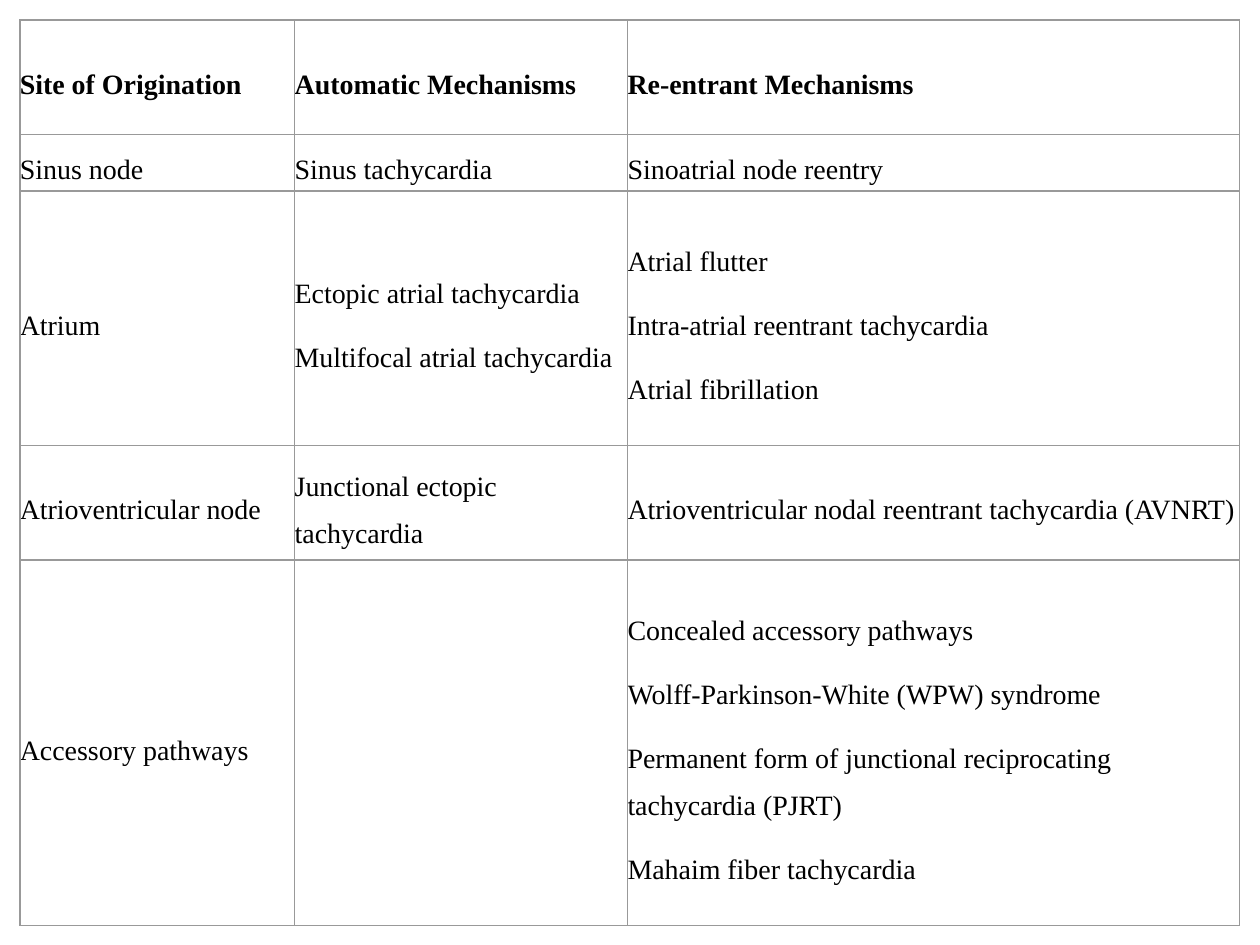
import dataclasses

import lxml.etree
import pptx
import pptx.dml.color
import pptx.enum.text
import pptx.oxml.ns
import pptx.util

Cm = pptx.util.Cm
Pt = pptx.util.Pt

COLORS = {"text": "000000", "cell": "FFFFFF", "border": "999999"}
FONT = "Times New Roman"
COLUMN_WIDTHS = (5.54, 6.71, 12.34)
TABLE_LEFT = TABLE_TOP = 0.4


@dataclasses.dataclass(frozen=True)
class TachycardiaRow:
    height: float
    site: str
    automatic: tuple[str, ...]
    reentrant: tuple[str, ...]
    bold: bool = False


ROWS = (
    TachycardiaRow(2.31, "Site of Origination", ("Automatic Mechanisms",),
                   ("Re-entrant Mechanisms",), bold=True),
    TachycardiaRow(1.14, "Sinus node", ("Sinus tachycardia",),
                   ("Sinoatrial node reentry",)),
    TachycardiaRow(5.13, "Atrium",
                   ("Ectopic atrial tachycardia", "Multifocal atrial tachycardia"),
                   ("Atrial flutter", "Intra-atrial reentrant tachycardia",
                    "Atrial fibrillation")),
    TachycardiaRow(2.31, "Atrioventricular node", ("Junctional ectopic tachycardia",),
                   ("Atrioventricular nodal reentrant tachycardia (AVNRT)",)),
    TachycardiaRow(7.37, "Accessory pathways", (),
                   ("Concealed accessory pathways",
                    "Wolff-Parkinson-White (WPW) syndrome",
                    "Permanent form of junctional reciprocating tachycardia (PJRT)",
                    "Mahaim fiber tachycardia")),
)


def rgb(name: str) -> pptx.dml.color.RGBColor:
    return pptx.dml.color.RGBColor.from_string(COLORS[name])


def add_borders(cell) -> None:
    """Outline the cell; must run before its fill is set, as the schema orders them."""
    qn = pptx.oxml.ns.qn
    properties = cell._tc.get_or_add_tcPr()
    for side in ("lnL", "lnR", "lnT", "lnB"):
        line = lxml.etree.SubElement(properties, qn(f"a:{side}"), w=str(Pt(1)))
        fill = lxml.etree.SubElement(line, qn("a:solidFill"))
        lxml.etree.SubElement(fill, qn("a:srgbClr"), val=COLORS["border"])


def format_cell(cell) -> None:
    add_borders(cell)
    cell.fill.solid()
    cell.fill.fore_color.rgb = rgb("cell")
    cell.margin_left = cell.margin_right = cell.margin_top = cell.margin_bottom = 0
    cell.vertical_anchor = pptx.enum.text.MSO_ANCHOR.MIDDLE


def write_cell(cell, lines: tuple[str, ...], bold: bool) -> None:
    """Write one paragraph per line, spaced apart when there are several."""
    frame = cell.text_frame
    for index, text in enumerate(lines):
        paragraph = frame.add_paragraph() if index else frame.paragraphs[0]
        paragraph.line_spacing = 1.5
        if len(lines) > 1:
            paragraph.space_before = paragraph.space_after = Pt(5)
        run = paragraph.add_run()
        run.text = text
        run.font.name = FONT
        run.font.size = Pt(16)
        run.font.bold = bold
        run.font.color.rgb = rgb("text")


def add_tachycardia_table(slide) -> None:
    frame = slide.shapes.add_table(
        len(ROWS), len(COLUMN_WIDTHS), Cm(TABLE_LEFT), Cm(TABLE_TOP),
        Cm(sum(COLUMN_WIDTHS)), Cm(sum(row.height for row in ROWS)))
    table = frame.table
    table.first_row = table.horz_banding = False
    for column, width in zip(table.columns, COLUMN_WIDTHS):
        column.width = Cm(width)
    for table_row, row in zip(table.rows, ROWS):
        table_row.height = Cm(row.height)
        for cell, lines in zip(table_row.cells, ((row.site,), row.automatic, row.reentrant)):
            format_cell(cell)
            write_cell(cell, lines, row.bold)


def main() -> None:
    presentation = pptx.Presentation()
    presentation.slide_width = Cm(25.4)
    presentation.slide_height = Cm(19.05)
    slide = presentation.slides.add_slide(presentation.slide_layouts[6])
    add_tachycardia_table(slide)
    presentation.save("out.pptx")


if __name__ == "__main__":
    main()
